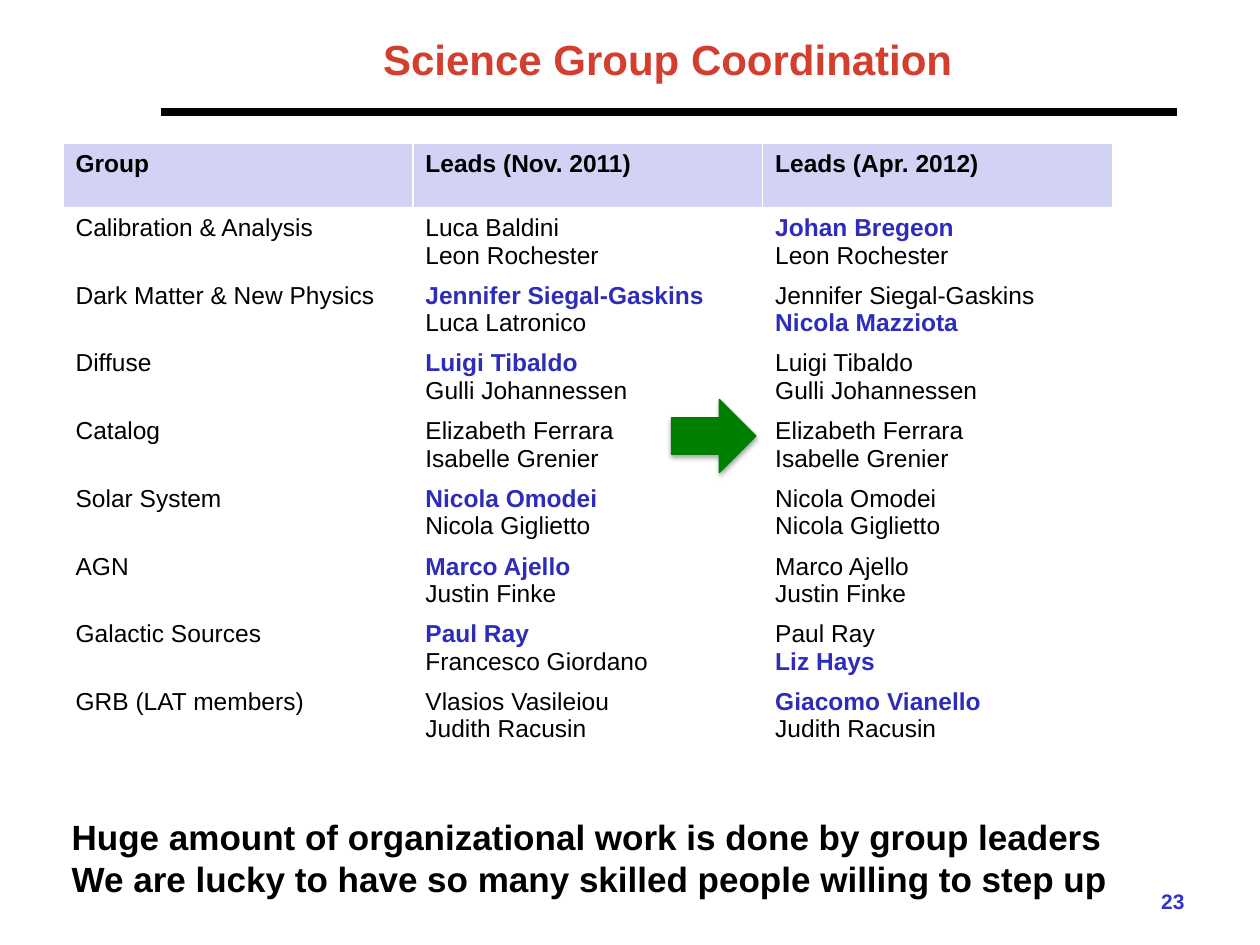
from lxml import etree
from pptx import Presentation
from pptx.dml.color import RGBColor
from pptx.enum.shapes import MSO_CONNECTOR, MSO_SHAPE
from pptx.enum.text import MSO_ANCHOR, PP_ALIGN
from pptx.oxml import parse_xml
from pptx.oxml.ns import qn
from pptx.util import Inches, Pt

LEFT, MID, RIGHT = PP_ALIGN.LEFT, PP_ALIGN.CENTER, PP_ALIGN.RIGHT
ANCHOR = MSO_ANCHOR.MIDDLE
BLACK, BLUE, GREEN = "000000", "2D2DB9", "008000"
SHADOW = (
    '<a:effectLst xmlns:a="http://schemas.openxmlformats.org/drawingml/2006/main">'
    '<a:outerShdw blurRad="39370" dist="22860" dir="5400000" rotWithShape="0">'
    '<a:srgbClr val="000000"><a:alpha val="35000"/></a:srgbClr>'
    "</a:outerShdw></a:effectLst>"
)


def color(code):
    return RGBColor.from_string(code)


def write(frame, lines, size, align=LEFT):
    """Fill a text frame with (text, color, bold) lines, one paragraph each."""
    for i, (text, code, bold) in enumerate(lines):
        para = frame.paragraphs[0] if i == 0 else frame.add_paragraph()
        para.alignment = align
        run = para.add_run()
        run.text = text
        look = {"name": "Arial", "size": Pt(size), "bold": bold}
        for key, value in look.items():
            setattr(run.font, key, value)
        run.font.color.rgb = color(code)


deck = Presentation()
deck.slide_width, deck.slide_height = Inches(10), Inches(7.5)
slide = deck.slides.add_slide(deck.slide_layouts[5])
shapes = slide.shapes

# Title and rule
title = shapes.title
place = {"left": 1.24, "top": 0.11, "width": 8.12, "height": 0.72}
for key, value in place.items():
    setattr(title, key, Inches(value))
title.text_frame.vertical_anchor = ANCHOR
write(title.text_frame, [("Science Group Coordination", "D43E2E", True)], 24, MID)

rule = shapes.add_connector(
    MSO_CONNECTOR.STRAIGHT, Inches(1.28), Inches(0.89), Inches(9.34), Inches(0.89))
rule.line.color.rgb = color(BLACK)
rule.line.width = Pt(4.5)
etree.SubElement(rule._element.spPr, qn("a:effectLst"))

# Table of group leads: a star marks a new lead
heads = ["Group", "Leads (Nov. 2011)", "Leads (Apr. 2012)"]
groups = [
    ("Calibration & Analysis", "Luca Baldini|Leon Rochester",
     "*Johan Bregeon|Leon Rochester"),
    ("Dark Matter & New Physics", "*Jennifer Siegal-Gaskins|Luca Latronico",
     "Jennifer Siegal-Gaskins|*Nicola Mazziota"),
    ("Diffuse", "*Luigi Tibaldo|Gulli Johannessen",
     "Luigi Tibaldo|Gulli Johannessen"),
    ("Catalog", "Elizabeth Ferrara|Isabelle Grenier",
     "Elizabeth Ferrara|Isabelle Grenier"),
    ("Solar System", "*Nicola Omodei|Nicola Giglietto",
     "Nicola Omodei|Nicola Giglietto"),
    ("AGN", "*Marco Ajello|Justin Finke", "Marco Ajello|Justin Finke"),
    ("Galactic Sources", "*Paul Ray|Francesco Giordano", "Paul Ray|*Liz Hays"),
    ("GRB (LAT members)", "Vlasios Vasileiou|Judith Racusin",
     "*Giacomo Vianello|Judith Racusin"),
]
rows = [heads, *groups]
table = shapes.add_table(
    len(rows), len(heads), Inches(0.5), Inches(1.14), Inches(8.33), Inches(4.8)).table
table.first_row = table.horz_banding = False
for col in table.columns:
    col.width = Inches(8.33 / len(heads))
for r, row in enumerate(rows):
    table.rows[r].height = Inches(0.72 if row is rows[-1] else 0.51)
    for c, names in enumerate(row):
        cell = table.cell(r, c)
        if r == 0:
            cell.fill.solid()
            cell.fill.fore_color.rgb = color("D2D2F4")
        else:
            cell.fill.background()
        lines = []
        for name in names.split("|"):
            new = name.startswith("*")
            lines.append((name.lstrip("*"), BLUE if new else BLACK, new or r == 0))
        write(cell.text_frame, lines, 14)

# Closing words
close = shapes.add_textbox(Inches(0.47), Inches(6.42), Inches(8.49), Inches(0.77))
close.text_frame.word_wrap = False
write(close.text_frame, [
    ("Huge amount of organizational work is done by group leaders", BLACK, True),
    ("We are lucky to have so many skilled people willing to step up", BLACK, True),
], 20)

# Arrow from old leads to new
arrow = shapes.add_shape(
    MSO_SHAPE.RIGHT_ARROW, Inches(5.33), Inches(3.17), Inches(0.67), Inches(0.58))
arrow.fill.solid()
arrow.fill.fore_color.rgb = color(GREEN)
arrow.line.color.rgb = color(GREEN)
arrow.line.width = Pt(0.75)
arrow._element.spPr.append(parse_xml(SHADOW))

# Page number
page = shapes.add_textbox(Inches(7.17), Inches(6.95), Inches(2.33), Inches(0.4))
page.text_frame.word_wrap = True
page.text_frame.vertical_anchor = ANCHOR
write(page.text_frame, [("23", "3333CC", True)], 12, RIGHT)

deck.save("out.pptx")
